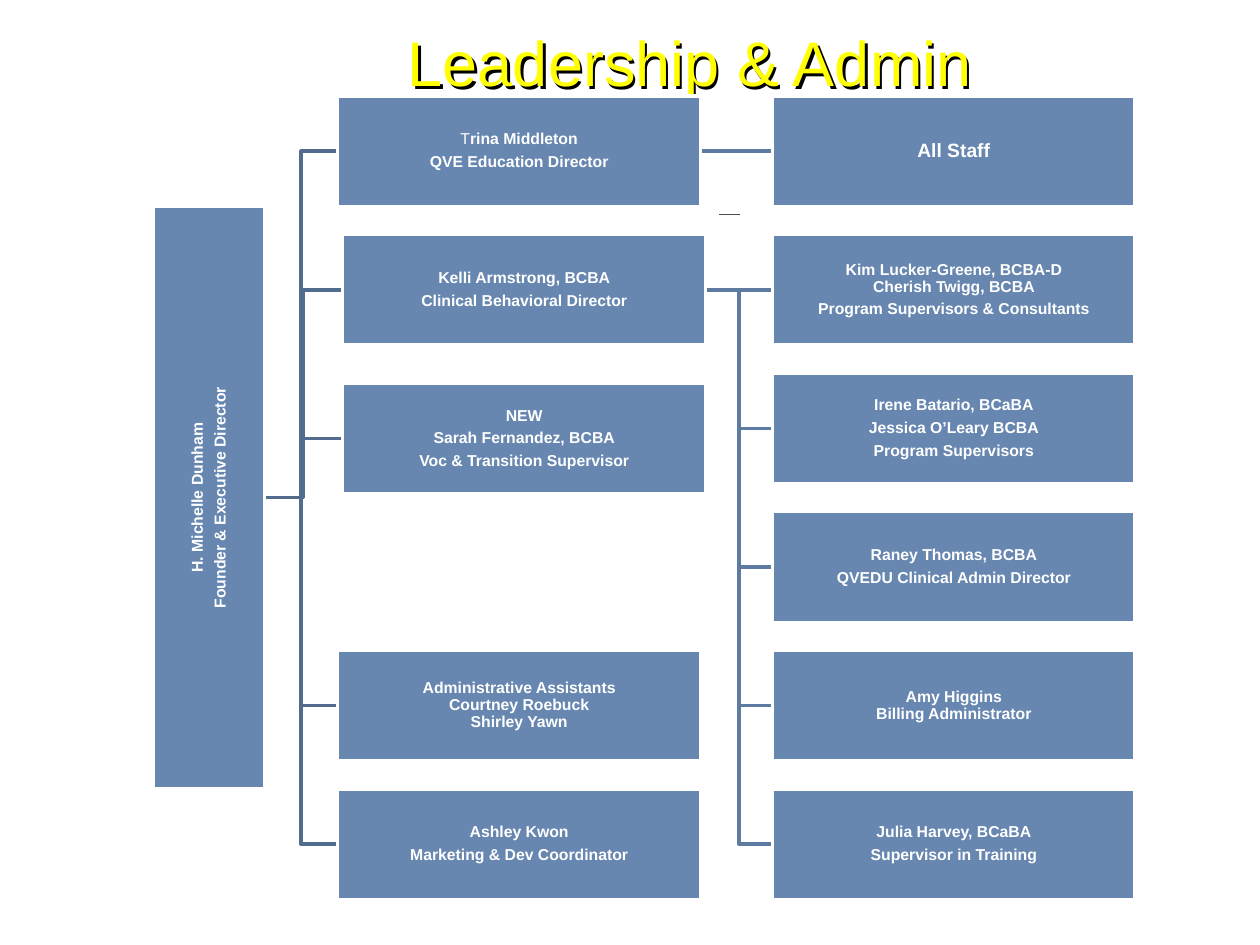
from copy import deepcopy
from dataclasses import dataclass
from typing import Any

from lxml.etree import SubElement as Sub
from pptx import Presentation as Deck
from pptx.dml.color import RGBColor as Rgb
from pptx.enum.shapes import MSO_CONNECTOR as Link, MSO_SHAPE as Kind
from pptx.enum.text import MSO_ANCHOR as Anchor, PP_ALIGN as Align
from pptx.oxml.ns import qn
from pptx.util import Inches, Pt


@dataclass(frozen=True)
class Theme:
    font: str = "Arial"
    title: Rgb = Rgb(0xFF, 0xFF, 0x00)
    shade: Rgb = Rgb(0x00, 0x00, 0x00)
    fill: Rgb = Rgb(0x67, 0x87, 0xB1)
    white: Rgb = Rgb(0xFF, 0xFF, 0xFF)
    trunk: Rgb = Rgb(0x52, 0x6C, 0x8E)
    branch: Rgb = Rgb(0x5D, 0x7B, 0xA1)
    dash: Rgb = Rgb(0x4D, 0x4D, 0x4D)
    head: float = 36
    body: float = 9
    large: float = 11
    rule: float = 2
    thin: float = 0.75


@dataclass(frozen=True)
class Box:
    left: float
    top: float
    text: str
    size: float = Theme.body
    plain: int = 0
    width: float = 2.88
    high: float = 0.88
    turn: float = 0

    @property
    def right(self) -> float:
        return self.left + self.width

    @property
    def mid(self) -> float:
        return self.top + self.high / 2


LOOK = Theme()
ROWS = [0.76 + 1.1 * i for i in range(6)]
LEFT, INNER, RIGHT = 2.68, 2.72, 6.13
HUB = (2.1, 3.95)

CHIEF = Box(-0.65, 3.51, "H. Michelle Dunham\nFounder & Executive Director",
            width=4.62, turn=270)
TRINA = Box(LEFT, ROWS[0], "Trina Middleton\nQVE Education Director", plain=1)
STAFF = Box(RIGHT, ROWS[0], "All Staff", LOOK.large)
SARAH = Box(INNER, 3.04,
            "NEW\nSarah Fernandez, BCBA\nVoc & Transition Supervisor")
KELLI = Box(INNER, ROWS[1],
            "Kelli Armstrong, BCBA\nClinical Behavioral Director")
AIDES = Box(LEFT, ROWS[4],
            "Administrative Assistants\vCourtney Roebuck\vShirley Yawn")
ASHLEY = Box(LEFT, ROWS[5], "Ashley Kwon\nMarketing & Dev Coordinator")
TEAM = [Box(RIGHT, top, text) for top, text in zip(ROWS[1:], (
    "Kim Lucker-Greene, BCBA-D\vCherish Twigg, BCBA\n"
    "Program Supervisors & Consultants",
    "Irene Batario, BCaBA\nJessica O’Leary BCBA\nProgram Supervisors",
    "Raney Thomas, BCBA\nQVEDU Clinical Admin Director",
    "Amy Higgins\vBilling Administrator",
    "Julia Harvey, BCaBA\nSupervisor in Training"))]


def apply(item: Any, values: dict[str, Any]) -> None:
    for name, value in values.items():
        setattr(item, name, value)


def ink(line: Any, color: Rgb, width: float) -> None:
    line.color.rgb = color
    line.width = Pt(width)


def add_title(slide: Any) -> None:
    title = slide.shapes.title
    apply(title, dict(left=Inches(1.38), top=Inches(0.21),
                      width=Inches(8.19), height=Inches(0.56)))
    apply(title.text_frame, dict(text="Leadership & Admin", word_wrap=True,
                                 vertical_anchor=Anchor.MIDDLE))
    para = title.text_frame.paragraphs[0]
    para.alignment = Align.CENTER
    font = para.runs[0].font
    apply(font, dict(name=LOOK.font, size=Pt(LOOK.head)))
    font.color.rgb = LOOK.title
    glow = Sub(title._element.spPr, qn("a:effectLst"))
    cast = Sub(glow, qn("a:outerShdw"), dist=str(Pt(1.8)), dir="2700000")
    Sub(cast, qn("a:srgbClr"), val=str(LOOK.shade))


def add_run(para: Any, text: str, size: float, bold: bool) -> Any:
    run = para.add_run()
    run.text = text
    apply(run.font, dict(name=LOOK.font, size=Pt(size), bold=bold))
    run.font.color.rgb = LOOK.white
    return run


def fill_para(para: Any, text: str, size: float, plain: int) -> None:
    apply(para, dict(alignment=Align.CENTER, line_spacing=0.9,
                     space_after=Pt(size * 0.35)))
    if plain:
        add_run(para, text[:plain], size, False)
    for i, part in enumerate(text[plain:].split("\v")):
        if i:
            para.add_line_break()
        run = add_run(para, part, size, True)
    for gap in para._p.findall(qn("a:br")):
        gap.append(deepcopy(run._r.rPr))


def add_box(slide: Any, box: Box) -> Any:
    shape = slide.shapes.add_shape(
        Kind.RECTANGLE, Inches(box.left), Inches(box.top),
        Inches(box.width), Inches(box.high))
    shape.rotation = box.turn
    shape.shadow.inherit = False
    shape.fill.solid()
    shape.fill.fore_color.rgb = LOOK.fill
    ink(shape.line, LOOK.white, LOOK.rule)
    frame = shape.text_frame
    sides = ("left", "right", "top", "bottom")
    apply(frame, {f"margin_{side}": Inches(0.01) for side in sides})
    apply(frame, dict(word_wrap=True, vertical_anchor=Anchor.MIDDLE))
    for i, text in enumerate(box.text.split("\n")):
        para = frame.add_paragraph() if i else frame.paragraphs[0]
        fill_para(para, text, box.size, 0 if i else box.plain)
    return shape


def add_elbow(slide: Any, start: tuple[float, float], box: Box,
              color: Rgb) -> None:
    x, y = start
    bend = (x + box.left) / 2
    path = slide.shapes.build_freeform(Inches(x), Inches(y))
    path.add_line_segments(
        [(Inches(a), Inches(b)) for a, b in
         ((bend, y), (bend, box.mid), (box.left, box.mid))], close=False)
    shape = path.convert_to_shape()
    shape.shadow.inherit = False
    shape.fill.background()
    ink(shape.line, color, LOOK.rule)


def add_line(slide: Any, start: tuple[float, float],
             end: tuple[float, float], color: Rgb, width: float) -> Any:
    line = slide.shapes.add_connector(
        Link.STRAIGHT, *(Inches(v) for v in (*start, *end)))
    Sub(line._element.spPr, qn("a:effectLst"))
    ink(line.line, color, width)
    return line


def main() -> None:
    deck = Deck()
    apply(deck, dict(slide_width=Inches(10), slide_height=Inches(7.5)))
    slide = deck.slides.add_slide(deck.slide_layouts[5])
    add_title(slide)
    for box in (ASHLEY, AIDES, KELLI, SARAH, TRINA):
        add_elbow(slide, HUB, box, LOOK.trunk)
    for box in TEAM[:0:-1]:
        add_elbow(slide, (KELLI.right, KELLI.mid), box, LOOK.branch)
    pairs = ((KELLI, TEAM[0]), (TRINA, STAFF))
    links = [add_line(slide, (a.right, a.mid), (b.left, b.mid),
                      LOOK.branch, LOOK.rule) for a, b in pairs]
    boxes = (CHIEF, TRINA, STAFF, SARAH, KELLI, *TEAM, AIDES, ASHLEY)
    drawn = {box: add_box(slide, box) for box in boxes}
    for line, (a, b) in zip(links, pairs):
        line.begin_connect(drawn[a], 3)
        line.end_connect(drawn[b], 1)
    add_line(slide, (5.71, 1.7), (5.87, 1.7), LOOK.dash, LOOK.thin)
    deck.save("out.pptx")


if __name__ == "__main__":
    main()
